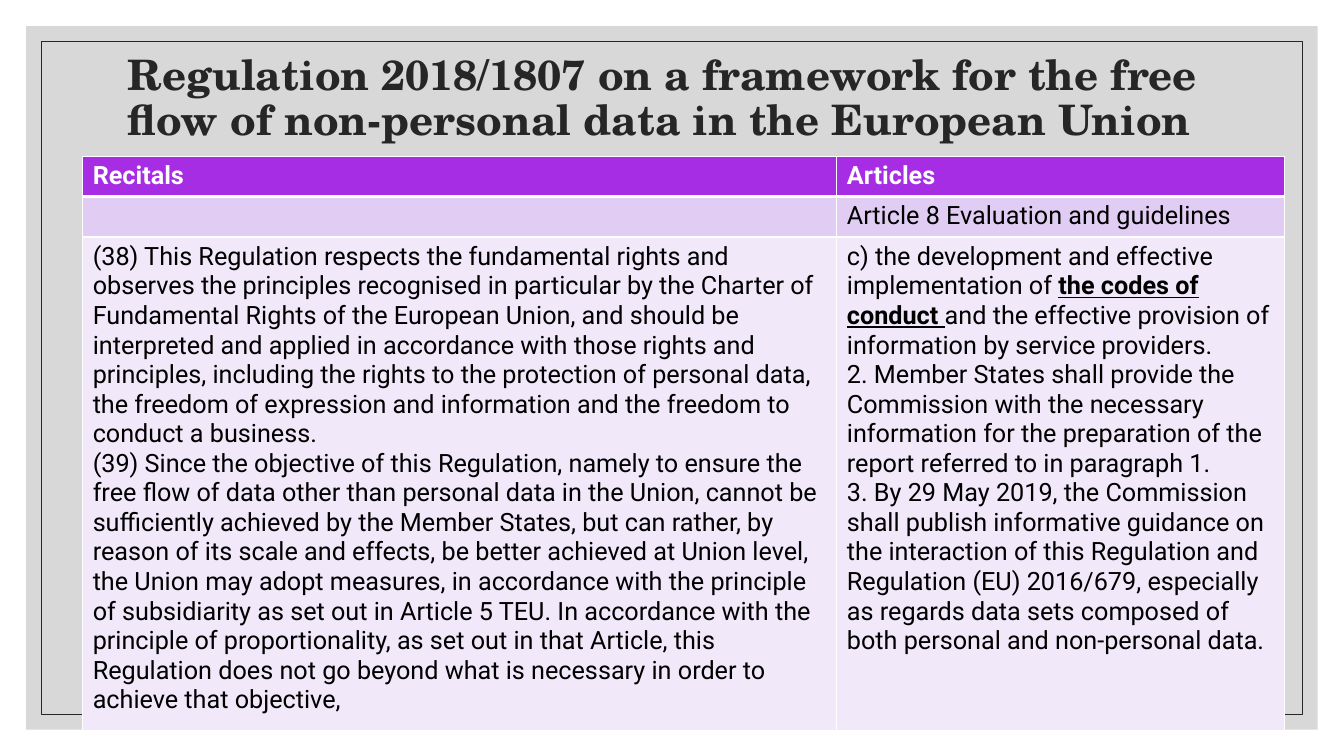
import pptx
import pptx.util
import pptx.dml.color
import pptx.enum.shapes
import pptx.enum.text
import pptx.oxml
import pptx.oxml.ns
from lxml import etree

Inches = pptx.util.Inches
RGBColor = pptx.dml.color.RGBColor

TITLE = "Regulation 2018/1807 on a framework for the free flow of non-personal data in the European Union"
RECITALS = [
    ["(38) This Regulation respects the fundamental rights and observes the principles recognised in particular by the Charter of Fundamental Rights of the European Union, and should be interpreted and applied in accordance with those rights and principles, including the rights to the protection of personal data, the freedom of expression and information and the freedom to conduct a business. "],
    ["(39) Since the objective of this Regulation, namely to ensure the free flow of data other than personal data in the Union, cannot be sufficiently achieved by the Member States, but can rather, by reason of its scale and effects, be better achieved at Union level, the Union may adopt measures, in accordance with the principle of subsidiarity as set out in Article 5 TEU. In accordance with the principle of proportionality, as set out in that Article, this Regulation does not go beyond what is necessary in order to achieve that objective,"],
]
ARTICLES = [
    ["c) the development and effective implementation of ", ("the codes of conduct ",), "and the effective provision of information by service providers."],
    ["2. Member States shall provide the Commission with the necessary information for the preparation of the report referred to in paragraph 1."],
    ["3. By 29 May 2019, the Commission shall publish informative guidance on the interaction of this Regulation and Regulation (EU) 2016/679, especially as regards data sets composed of both personal and non-personal data."],
]
ROWS = [
    [[["Recitals"]], [["Articles"]]],
    [[], [["Article 8 Evaluation and guidelines"]]],
    [RECITALS, ARTICLES],
]
COL_WIDTHS = (7.48, 4.44)
ROW_HEIGHTS = (0.37, 0.37, 4.48)

WHITE = RGBColor(0xFF, 0xFF, 0xFF)
BLACK = RGBColor(0, 0, 0)
INK = RGBColor(0x26, 0x26, 0x26)
GREY = RGBColor(0xBF, 0xBF, 0xBF)
PURPLE = RGBColor(0xA6, 0x2D, 0xE3)
LILAC = RGBColor(0xE1, 0xCD, 0xF4)
PALE = RGBColor(0xF1, 0xE8, 0xFA)
ROW_FILLS = (PURPLE, LILAC, PALE)

WIDTH, HEIGHT = 13.33, 7.5


def write(tf, paragraphs, font="Roboto", size=18, color=BLACK, bold=False, spacing=None):
    for i, parts in enumerate(paragraphs):
        p = tf.paragraphs[0] if i == 0 else tf.add_paragraph()
        p.line_spacing = spacing
        for part in parts:
            stressed = isinstance(part, tuple)
            r = p.add_run()
            r.text = part[0] if stressed else part
            r.font.name = font
            r.font.size = pptx.util.Pt(size)
            r.font.color.rgb = color
            r.font.bold = bold or stressed
            r.font.underline = stressed


def add_panel(shapes, margin):
    s = shapes.add_shape(
        pptx.enum.shapes.MSO_SHAPE.RECTANGLE, Inches(margin), Inches(margin),
        Inches(WIDTH - 2 * margin), Inches(HEIGHT - 2 * margin))
    s.shadow.inherit = False
    return s


def set_borders(cell, bottom):
    tc_pr = cell._tc.get_or_add_tcPr()
    for i, (side, points) in enumerate((("L", 1), ("R", 1), ("T", 1), ("B", bottom))):
        ln = pptx.oxml.parse_xml(
            f'<a:ln{side} {pptx.oxml.ns.nsdecls("a")} w="{points * 12700}">'
            f'<a:solidFill><a:srgbClr val="{WHITE}"/></a:solidFill></a:ln{side}>')
        tc_pr.insert(i, ln)


def main():
    prs = pptx.Presentation()
    prs.slide_width, prs.slide_height = Inches(WIDTH), Inches(HEIGHT)
    shapes = prs.slides.add_slide(prs.slide_layouts[6]).shapes

    backdrop = add_panel(shapes, 0.26)
    backdrop.fill.solid()
    backdrop.fill.fore_color.rgb = GREY
    backdrop.line.fill.background()
    color = backdrop.fill._xPr.find(".//" + pptx.oxml.ns.qn("a:srgbClr"))
    etree.SubElement(color, pptx.oxml.ns.qn("a:alpha"), val="60000")

    frame = add_panel(shapes, 0.41)
    frame.fill.background()
    frame.line.color.rgb = INK
    frame.line.width = pptx.util.Pt(0.5)

    title = shapes.add_textbox(Inches(1.17), Inches(0.56), Inches(11), Inches(0.85))
    tf = title.text_frame
    tf.word_wrap = True
    tf.vertical_anchor = pptx.enum.text.MSO_ANCHOR.MIDDLE
    write(tf, [[TITLE]], font="TeX Gyre Schola", size=30, color=INK, bold=True, spacing=0.9)

    table = shapes.add_table(
        len(ROWS), len(COL_WIDTHS), Inches(0.82), Inches(1.55),
        Inches(sum(COL_WIDTHS)), Inches(sum(ROW_HEIGHTS))).table
    for column, width in zip(table.columns, COL_WIDTHS):
        column.width = Inches(width)
    for i, (row, height) in enumerate(zip(table.rows, ROW_HEIGHTS)):
        row.height = Inches(height)
        header = i == 0
        for cell, paragraphs in zip(row.cells, ROWS[i]):
            cell.fill.solid()
            cell.fill.fore_color.rgb = ROW_FILLS[i]
            set_borders(cell, bottom=3 if header else 1)
            write(cell.text_frame, paragraphs, color=WHITE if header else BLACK, bold=header)

    prs.save("out.pptx")


if __name__ == "__main__":
    main()
